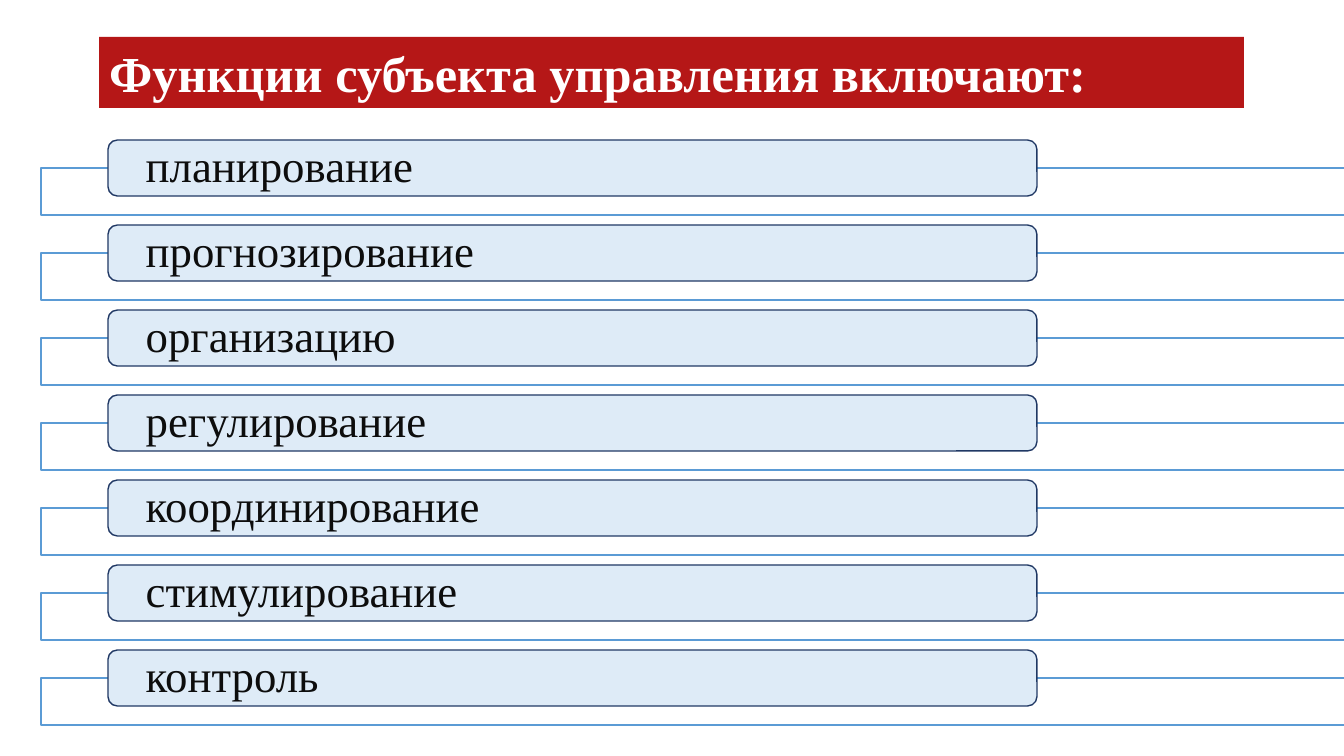
from lxml.etree import SubElement
from pptx import Presentation
from pptx.dml.color import RGBColor
from pptx.enum.shapes import MSO_SHAPE
from pptx.enum.text import MSO_ANCHOR, MSO_AUTO_SIZE, PP_ALIGN
from pptx.oxml.ns import qn
from pptx.util import Pt

EMU_PER_PX = 914400 / 100.8
HEADING = "Функции субъекта управления включают:"
FUNCTIONS = [
    "планирование",
    "прогнозирование",
    "организацию",
    "регулирование",
    "координирование",
    "стимулирование",
    "контроль",
]
HEADING_FONT = {"name": "Times New Roman", "size": Pt(36), "bold": True}
FUNCTION_FONT = {"name": "Times New Roman", "size": Pt(32), "bold": False}


def px(length):
    """Turn pixels into EMU."""
    return round(length * EMU_PER_PX)


def paint(colour_format, colour):
    """Give a colour format an RRGGBB colour."""
    colour_format.rgb = RGBColor.from_string(colour)


def apply(target, values):
    """Set every attribute named in a dict."""
    for attribute, value in values.items():
        setattr(target, attribute, value)


def fill(shape, colour):
    """Give a shape a solid fill."""
    shape.fill.solid()
    paint(shape.fill.fore_color, colour)


def write(shape, wording, font, colour, frame, paragraph):
    """Put one left-aligned formatted paragraph into a shape."""
    text = shape.text_frame
    text.text = wording
    apply(text, {"word_wrap": True, "auto_size": MSO_AUTO_SIZE.NONE, **frame})
    line = text.paragraphs[0]
    apply(line, {"alignment": PP_ALIGN.LEFT, **paragraph})
    apply(line.runs[0].font, font)
    paint(line.runs[0].font.color, colour)


def outlined(slide, kind, box, fill_colour, line_colour):
    """Add a flat preset shape with a fill and a thin outline."""
    shape = slide.shapes.add_shape(kind, *map(px, box))
    shape.shadow.inherit = False
    fill(shape, fill_colour)
    paint(shape.line.color, line_colour)
    shape.line.width = Pt(1)
    return shape


def add_heading(slide, box):
    """Place the red heading band in its box."""
    heading = slide.shapes.title
    apply(heading, dict(zip(("left", "top", "width", "height"), map(px, box))))
    fill(heading, "B51717")
    write(heading, HEADING, HEADING_FONT, "FFFFFF",
          {"vertical_anchor": MSO_ANCHOR.TOP}, {"line_spacing": 1.0})


def add_function(slide, wording, box):
    """Place one function label over its wide frame in the given box."""
    left, top, width, height = box
    bar_height = 56
    frame_top = bar_height // 2
    frame = outlined(slide, MSO_SHAPE.RECTANGLE,
                     (left, top + frame_top, width, height - frame_top),
                     "FFFFFF", "5B9BD5")
    white = frame.fill._xPr.find(qn("a:solidFill"))[0]
    SubElement(white, qn("a:alpha"), val="90000")
    bar = outlined(slide, MSO_SHAPE.ROUNDED_RECTANGLE,
                   (left + 67, top, 929, bar_height), "DEEBF7", "203864")
    margins = {"margin_left": px(35), "margin_right": px(35),
               "margin_top": 0, "margin_bottom": 0}
    write(bar, wording, FUNCTION_FONT, "0D0D0D",
          {"vertical_anchor": MSO_ANCHOR.MIDDLE, **margins},
          {"line_spacing": 0.9})


def add_functions(slide, box):
    """Stack the functions at equal steps down the given box."""
    left, top, width, height = box
    row_height = 75
    step = (height - row_height) / (len(FUNCTIONS) - 1)
    for row, wording in enumerate(FUNCTIONS):
        add_function(slide, wording, (left, top + row * step, width, row_height))


def main():
    """Build and save the slide."""
    deck = Presentation()
    apply(deck, {"slide_width": px(1344), "slide_height": px(756)})
    slide = deck.slides.add_slide(deck.slide_layouts.get_by_name("Title Only"))
    add_heading(slide, (99, 37, 1145, 71))
    add_functions(slide, (41, 140, 1328, 585))
    deck.save("out.pptx")


if __name__ == "__main__":
    main()
